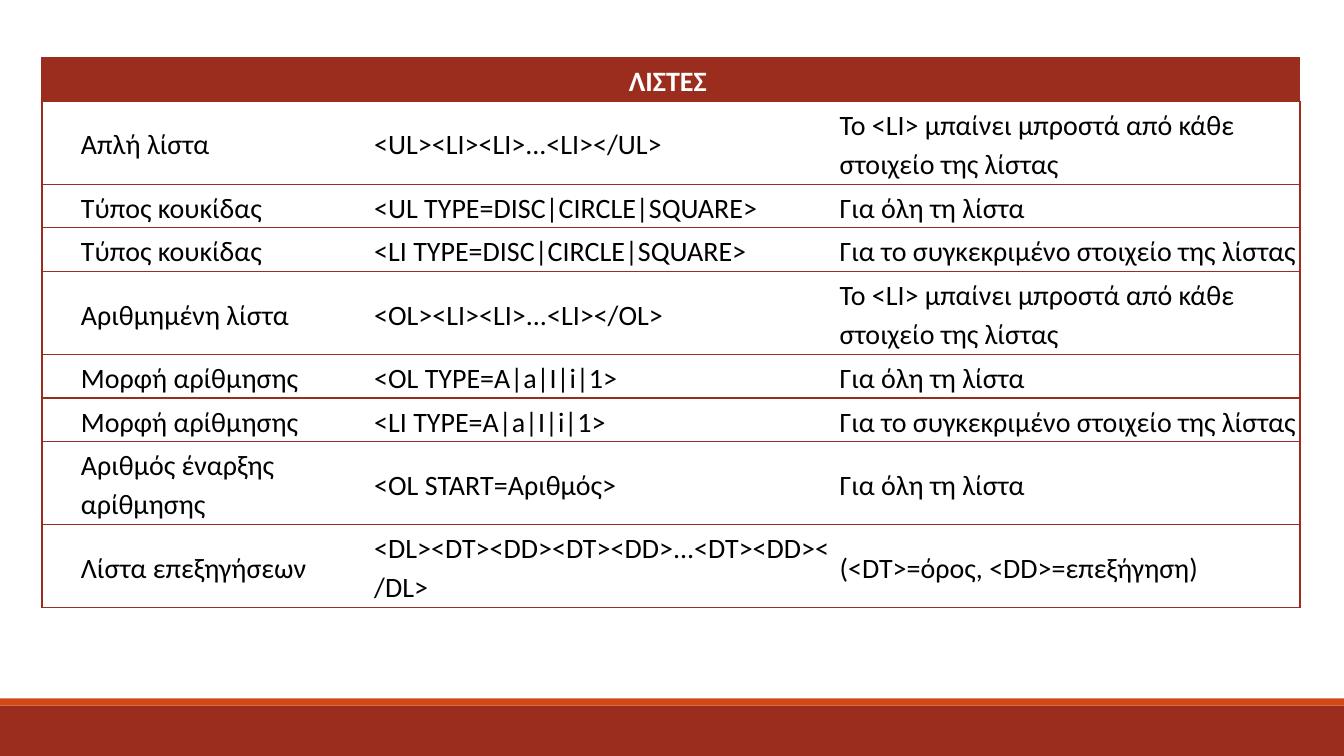
from lxml import etree
from pptx import Presentation
from pptx import util as u
from pptx.dml.color import RGBColor
from pptx.enum import shapes, text
from pptx.oxml import ns

BRICK = RGBColor(0x9B, 0x2D, 0x1F)
FLAME = RGBColor(0xD3, 0x48, 0x17)
WHITE = RGBColor(0xFF, 0xFF, 0xFF)
BLACK = RGBColor(0, 0, 0)
WIDE, HIGH = 33.87, 19.05
COLS = [0.94, 7.39, 11.73, 11.64]
ONE, TWO = 1.1, 2.09

ITEM = "To <LI> μπαίνει μπροστά από κάθε στοιχείο της λίστας"
WHOLE = "Για όλη τη λίστα"
SINGLE = "Για το συγκεκριμένο στοιχείο της λίστας"
ROWS = [
    (TWO, "Απλή λίστα", "<UL><LI><LI>...<LI></UL>", ITEM),
    (ONE, "Τύπος κουκίδας", "<UL TYPE=DISC|CIRCLE|SQUARE>", WHOLE),
    (ONE, "Τύπος κουκίδας", "<LI TYPE=DISC|CIRCLE|SQUARE>", SINGLE),
    (TWO, "Αριθμημένη λίστα", "<OL><LI><LI>...<LI></OL>", ITEM),
    (ONE, "Μορφή αρίθμησης", "<OL TYPE=A|a|I|i|1>", WHOLE),
    (ONE, "Μορφή αρίθμησης", "<LI TYPE=A|a|I|i|1>", SINGLE),
    (TWO, "Αριθμός έναρξης αρίθμησης", "<OL START=Αριθμός>", WHOLE),
    (TWO, "Λίστα επεξηγήσεων", "<DL><DT><DD><DT><DD>...<DT><DD></DL>",
     "(<DT>=όρος, <DD>=επεξήγηση)"),
]


class Deck:
    """Holds the style and the current slide."""

    font = "Calibri"
    size = u.Pt(20)
    inset = u.Cm(0.04)

    def __init__(self):
        self.show = Presentation()
        self.show.slide_width = u.Cm(WIDE)
        self.show.slide_height = u.Cm(HIGH)
        self.slide = self.show.slides.add_slide(self.show.slide_layouts[6])

    def bar(self, top, high, color):
        shape = self.slide.shapes.add_shape(
            shapes.MSO_SHAPE.RECTANGLE, 0, u.Cm(top), u.Cm(WIDE), u.Cm(high))
        shape.shadow.inherit = False
        shape.fill.solid()
        shape.fill.fore_color.rgb = color
        shape.line.fill.background()

    def edges(self, cell, sides):
        props = cell._tc.get_or_add_tcPr()
        for side in "LRTB":
            line = etree.SubElement(props, ns.qn("a:ln" + side), w=str(u.Pt(1)))
            if side in sides:
                fill = etree.SubElement(line, ns.qn("a:solidFill"))
                etree.SubElement(fill, ns.qn("a:srgbClr"), val=str(BRICK))
            else:
                etree.SubElement(line, ns.qn("a:noFill"))

    def label(self, cell, words, color, bold=False, align=None):
        cell.text_frame.text = words
        cell.vertical_anchor = text.MSO_ANCHOR.MIDDLE
        cell.margin_left = cell.margin_right = self.inset
        cell.margin_top = cell.margin_bottom = self.inset
        para = cell.text_frame.paragraphs[0]
        para.alignment = align
        para.line_spacing = 1.15
        para.space_after = u.Pt(10)
        font = para.font
        if para.runs:
            font = para.runs[0].font
        font.name, font.size, font.bold = self.font, self.size, bold
        font.color.rgb = color

    def table(self, left, top, title, rows):
        highs = [ONE] + [row[0] for row in rows]
        grid = self.slide.shapes.add_table(
            len(highs), len(COLS), u.Cm(left), u.Cm(top),
            u.Cm(sum(COLS)), u.Cm(sum(highs))).table
        grid.horz_banding = False
        for col, wide in zip(grid.columns, COLS):
            col.width = u.Cm(wide)
        for line, high in zip(grid.rows, highs):
            line.height = u.Cm(high)
        for r in range(len(highs)):
            for c in range(len(COLS)):
                cell = grid.cell(r, c)
                self.edges(cell, "TB" + {0: "L", len(COLS) - 1: "R"}.get(c, ""))
                if r == 0:
                    cell.fill.solid()
                    cell.fill.fore_color.rgb = BRICK
                else:
                    cell.fill.background()
                    self.label(cell, rows[r - 1][c] if c else "", BLACK)
        head = grid.cell(0, 0)
        head.merge(grid.cell(0, len(COLS) - 1))
        self.label(head, title, WHITE, True, text.PP_ALIGN.CENTER)


def main():
    deck = Deck()
    deck.bar(17.78, 1.27, BRICK)
    deck.bar(17.6, 0.18, FLAME)
    deck.table(1.06, 1.45, "ΛΙΣΤΕΣ ", ROWS)
    deck.show.save("out.pptx")


if __name__ == "__main__":
    main()
